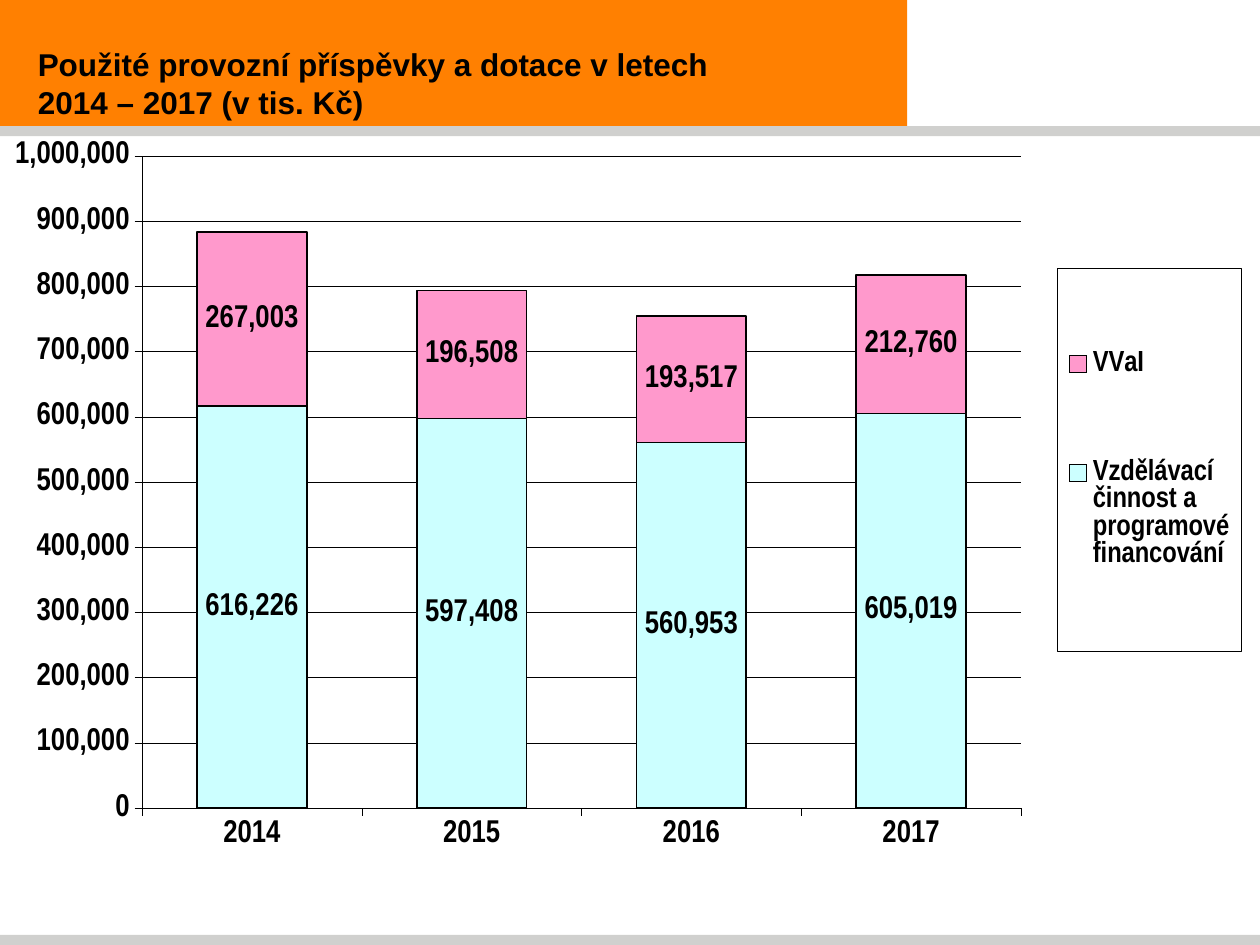
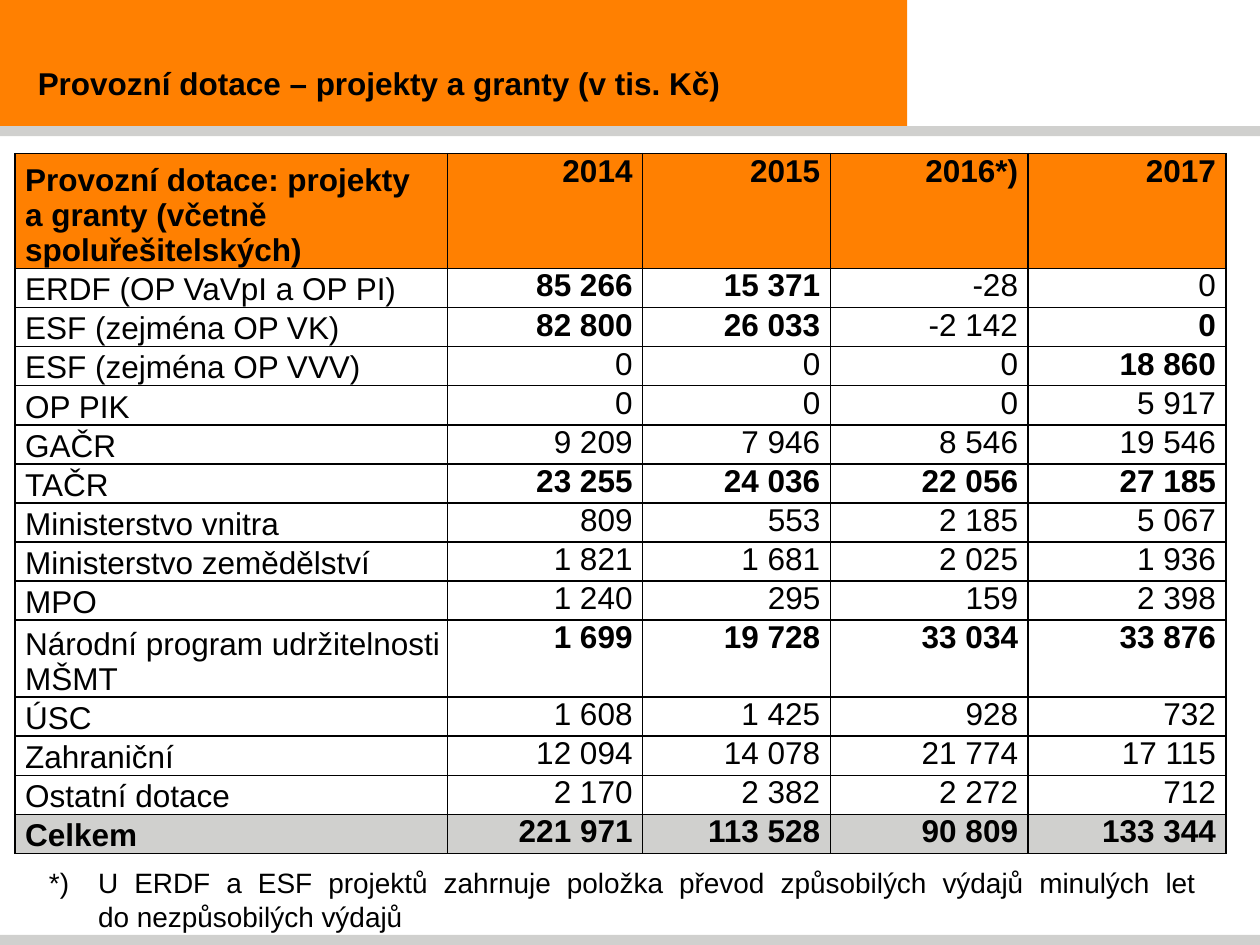
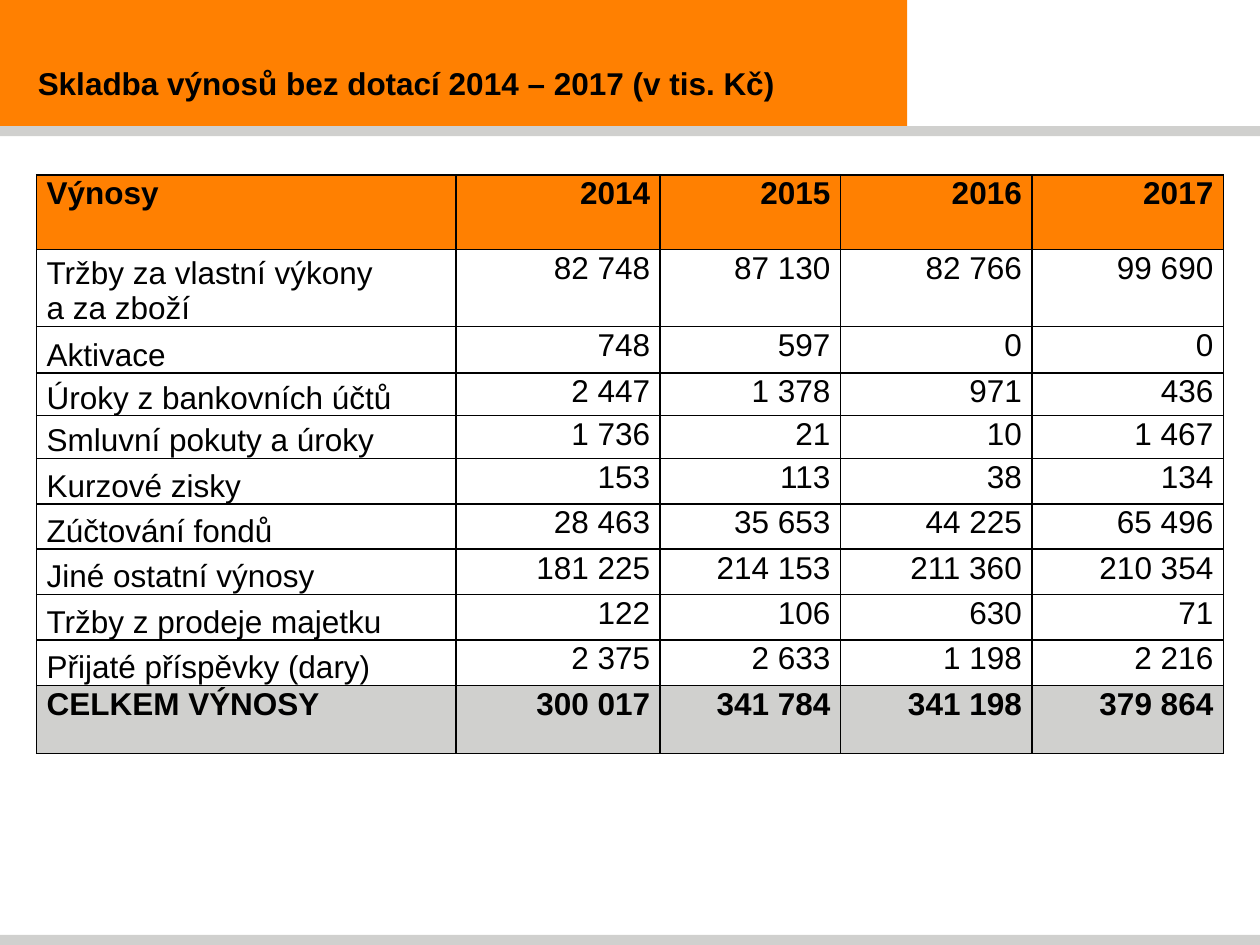
import pptx
import pptx.chart.data
import pptx.dml.color
import pptx.enum.chart
import pptx.enum.shapes
import pptx.enum.text
import pptx.oxml
import pptx.oxml.ns
import pptx.util

Inches = pptx.util.Inches
Pt = pptx.util.Pt
RGBColor = pptx.dml.color.RGBColor
Align = pptx.enum.text.PP_ALIGN
Anchor = pptx.enum.text.MSO_ANCHOR
qn = pptx.oxml.ns.qn

ORANGE = RGBColor(0xFF, 0x80, 0x01)
GREY = RGBColor(0xD0, 0xD0, 0xCE)
BLACK = RGBColor(0, 0, 0)
CYAN = RGBColor(0xCC, 0xFF, 0xFF)
PINK = RGBColor(0xFF, 0x99, 0xCC)

TITLES = [
    "Použité provozní příspěvky a dotace v letech\v2014 – 2017 (v tis. Kč)",
    "Provozní dotace – projekty a granty (v tis. Kč)",
    "Skladba výnosů bez dotací 2014 – 2017 (v tis. Kč)",
]


def write_text(frame, text, size=18, bold=False, align=Align.LEFT):
    paragraph = frame.paragraphs[0]
    paragraph.text = text
    paragraph.alignment = align
    font_format = {"name": "Arial", "size": Pt(size), "bold": bold}
    for run in paragraph.runs:
        for name, value in font_format.items():
            setattr(run.font, name, value)
        run.font.color.rgb = BLACK
    return paragraph


def place_part(part, index, box, inner=False):
    """Give a chart part a manual layout, in fractions of the chart."""
    for layout in part.findall(qn("c:layout")):
        part.remove(layout)
    target = '<c:layoutTarget val="inner"/>' if inner else ""
    modes = '<c:xMode val="edge"/><c:yMode val="edge"/>'
    sizes = "".join(f'<c:{name} val="{value}"/>' for name, value in zip("xywh", box))
    part.insert(index, pptx.oxml.parse_xml(
        f'<c:layout {pptx.oxml.ns.nsdecls("c")}><c:manualLayout>'
        f"{target}{modes}{sizes}</c:manualLayout></c:layout>"))


presentation = pptx.Presentation()
presentation.slide_width = Inches(10)
presentation.slide_height = Inches(7.5)
layout = presentation.slide_layouts[6]
for placeholder in list(layout.placeholders):
    placeholder.element.getparent().remove(placeholder.element)
slides = [presentation.slides.add_slide(layout) for title in TITLES]

# Bands, moved to the layout that all slides share
for left, top, width, height, color in [
    (0, 0, 7.2, 1, ORANGE),
    (0, 7.42, 10, 0.08, GREY),
    (0, 1, 10, 0.08, GREY),
]:
    band = slides[0].shapes.add_shape(
        pptx.enum.shapes.MSO_SHAPE.RECTANGLE,
        Inches(left), Inches(top), Inches(width), Inches(height))
    band.shadow.inherit = False
    band.fill.solid()
    band.fill.fore_color.rgb = color
    band.line.fill.background()
    layout.shapes.element.append(band.element)

# Titles
for slide, title in zip(slides, TITLES):
    frame = slide.shapes.add_textbox(
        Inches(0), Inches(0.32), Inches(7.2), Inches(0.68)).text_frame
    frame.word_wrap = True
    frame.margin_left = Inches(0.3)
    frame.vertical_anchor = Anchor.MIDDLE
    write_text(frame, title, bold=True)

# Slide 1: stacked columns
chart_data = pptx.chart.data.CategoryChartData(number_format="#,##0")
chart_data.categories = ["2014", "2015", "2016", "2017"]
chart_data.add_series("Vzdělávací činnost a programové financování",
                      [616226, 597408, 560953, 605019])
chart_data.add_series("VVaI", [267003, 196508, 193517, 212760])
chart = slides[0].shapes.add_chart(
    pptx.enum.chart.XL_CHART_TYPE.COLUMN_STACKED,
    Inches(0.12), Inches(1.12), Inches(9.73), Inches(5.95), chart_data).chart
chart.has_title = False
chart.has_legend = True
chart.legend.position = pptx.enum.chart.XL_LEGEND_POSITION.RIGHT
chart.legend.include_in_layout = False

plot = chart.plots[0]
plot.gap_width = 100
plot.overlap = 100
plot.vary_by_categories = False
plot.has_data_labels = True
labels = plot.data_labels
labels.show_value = True
labels.number_format = "#,##0"
labels.number_format_is_linked = False
for series, color in zip(plot.series, (CYAN, PINK)):
    series.format.fill.solid()
    series.format.fill.fore_color.rgb = color
    series.format.line.color.rgb = BLACK
    series.format.line.width = Pt(1)

value_axis, category_axis = chart.value_axis, chart.category_axis
value_format = {"minimum_scale": 0, "maximum_scale": 1000000, "major_unit": 100000,
                "has_major_gridlines": True}
for name, value in value_format.items():
    setattr(value_axis, name, value)
value_axis.tick_labels.number_format = "#,##0"
value_axis.tick_labels.number_format_is_linked = False
category_axis.tick_label_position = pptx.enum.chart.XL_TICK_LABEL_POSITION.LOW
for axis in (value_axis, category_axis):
    axis.major_tick_mark = pptx.enum.chart.XL_TICK_MARK.OUTSIDE
for line in (value_axis.format.line, category_axis.format.line,
             value_axis.major_gridlines.format.line):
    line.color.rgb = BLACK
    line.width = Pt(0.25)
for owner, size in [(chart, 18), (labels, 18), (value_axis.tick_labels, 18),
                    (category_axis.tick_labels, 18), (chart.legend, 16.6)]:
    font_format = {"name": "Arial Narrow", "size": Pt(size), "bold": True}
    for name, value in font_format.items():
        setattr(owner.font, name, value)
    owner.font.color.rgb = BLACK

# Plot area and framed legend
place_part(chart.element.find(".//" + qn("c:plotArea")), 0, (0.1, 0.02, 0.72, 0.87), inner=True)
legend = chart.element.find(".//" + qn("c:legend"))
place_part(legend, 1, (0.85, 0.17, 0.15, 0.51))
legend.find(qn("c:txPr")).addprevious(pptx.oxml.parse_xml(
    f'<c:spPr {pptx.oxml.ns.nsdecls("c", "a")}><a:ln w="3175"><a:solidFill>'
    f'<a:srgbClr val="{BLACK}"/></a:solidFill></a:ln></c:spPr>'))

# Table rows: label, values, columns in bold
ALL = (1, 2, 3, 4)
GRANTS = [
    ("Provozní dotace: projekty\va granty (včetně\vspoluřešitelských)",
     "2014|2015|2016*)|2017", (0, *ALL)),
    ("ERDF (OP VaVpI a OP PI)", "85 266|15 371|-28|0", (1, 2)),
    ("ESF (zejména OP VK)", "82 800|26 033|-2 142|0", (1, 2, 4)),
    ("ESF (zejména OP VVV)", "0|0|0|18 860", (4,)),
    ("OP PIK", "0|0|0|5 917", ()),
    ("GAČR", "9 209|7 946|8 546|19 546", ()),
    ("TAČR", "23 255|24 036|22 056|27 185", ALL),
    ("Ministerstvo vnitra", "809|553|2 185|5 067", ()),
    ("Ministerstvo zemědělství", "1 821|1 681|2 025|1 936", ()),
    ("MPO", "1 240|295|159|2 398", ()),
    ("Národní program udržitelnosti\vMŠMT", "1 699|19 728|33 034|33 876", ALL),
    ("ÚSC", "1 608|1 425|928|732", ()),
    ("Zahraniční", "12 094|14 078|21 774|17 115", ()),
    ("Ostatní dotace", "2 170|2 382|2 272|712", ()),
    ("Celkem", "221 971|113 528|90 809|133 344", (0, *ALL)),
]
REVENUES = [
    ("Výnosy", "2014|2015|2016|2017", (0, *ALL)),
    ("Tržby za vlastní výkony\va za zboží", "82 748|87 130|82 766|99 690", ()),
    ("Aktivace", "748|597|0|0", ()),
    ("Úroky z bankovních účtů", "2 447|1 378|971|436", ()),
    ("Smluvní pokuty a úroky", "1 736|21|10|1 467", ()),
    ("Kurzové zisky", "153|113|38|134", ()),
    ("Zúčtování fondů", "28 463|35 653|44 225|65 496", ()),
    ("Jiné ostatní výnosy", "181 225|214 153|211 360|210 354", ()),
    ("Tržby z prodeje majetku", "122|106|630|71", ()),
    ("Přijaté příspěvky (dary)", "2 375|2 633|1 198|2 216", ()),
    ("CELKEM VÝNOSY", "300 017|341 784|341 198|379 864", (0, *ALL)),
]
TABLES = [
    {"slide": slides[1], "left": 0.12, "top": 1.22, "rows": GRANTS,
     "widths": [3.43, 1.55, 1.49, 1.57, 1.57],
     "heights": [0.91] + [0.31] * 9 + [0.61] + [0.31] * 4,
     "value_margin": 0, "top_labels": ()},
    {"slide": slides[2], "left": 0.29, "top": 1.39, "rows": REVENUES,
     "widths": [3.33, 1.62, 1.43, 1.52, 1.52],
     "heights": [0.59, 0.57, 0.37, 0.34, 0.34] + [0.36] * 5 + [0.54],
     "value_margin": 0.01, "top_labels": (0, 10)},
]

# Slides 2 and 3: tables
for design in TABLES:
    rows, widths, heights = design["rows"], design["widths"], design["heights"]
    table = design["slide"].shapes.add_table(
        len(rows), len(widths), Inches(design["left"]), Inches(design["top"]),
        Inches(sum(widths)), Inches(sum(heights))).table
    for column, width in zip(table.columns, widths):
        column.width = Inches(width)
    for row, height in zip(table.rows, heights):
        row.height = Inches(height)
    for row_index, (label, values, bold_columns) in enumerate(rows):
        for column_index, text in enumerate([label, *values.split("|")]):
            cell = table.cell(row_index, column_index)
            is_label = column_index == 0
            at_bottom = is_label and row_index not in design["top_labels"]
            cell_format = {
                "margin_left": Inches(0.08 if is_label else 0.01),
                "margin_right": Inches(0.01 if is_label else 0.08),
                "margin_top": Inches(0.01 if is_label else design["value_margin"]),
                "margin_bottom": 0,
                "vertical_anchor": Anchor.BOTTOM if at_bottom else Anchor.TOP,
            }
            for name, value in cell_format.items():
                setattr(cell, name, value)
            write_text(cell.text_frame, text, bold=column_index in bold_columns,
                       align=Align.LEFT if is_label else Align.RIGHT)
            for side in "LRTB":
                cell._tc.get_or_add_tcPr().append(pptx.oxml.parse_xml(
                    f'<a:ln{side} {pptx.oxml.ns.nsdecls("a")} w="12700"><a:solidFill>'
                    f'<a:srgbClr val="{BLACK}"/></a:solidFill></a:ln{side}>'))
            if row_index in (0, len(rows) - 1):
                cell.fill.solid()
                cell.fill.fore_color.rgb = GREY if row_index else ORANGE
            else:
                cell.fill.background()

# Slide 2: footnote with a hanging indent
frame = slides[1].shapes.add_textbox(
    Inches(0.29), Inches(6.82), Inches(9.3), Inches(0.62)).text_frame
frame.word_wrap = True
note = write_text(
    frame,
    "*)\tU ERDF a ESF projektů zahrnuje položka převod způsobilých výdajů minulých let"
    "\vdo nezpůsobilých výdajů",
    size=16, align=Align.JUSTIFY)
properties = note._p.get_or_add_pPr()
properties.set("marL", str(Inches(0.39)))
properties.set("indent", str(-Inches(0.39)))

presentation.save("out.pptx")
